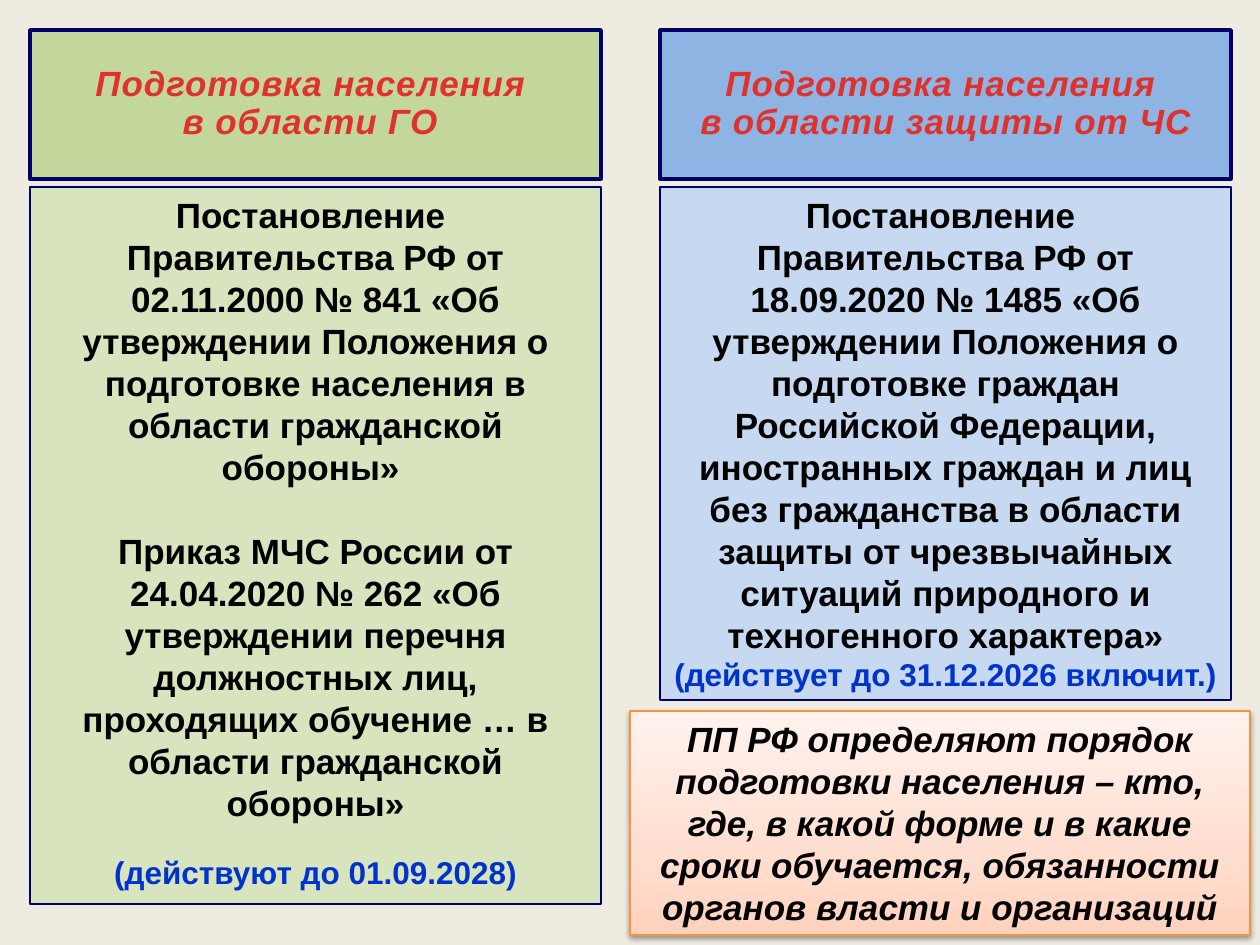
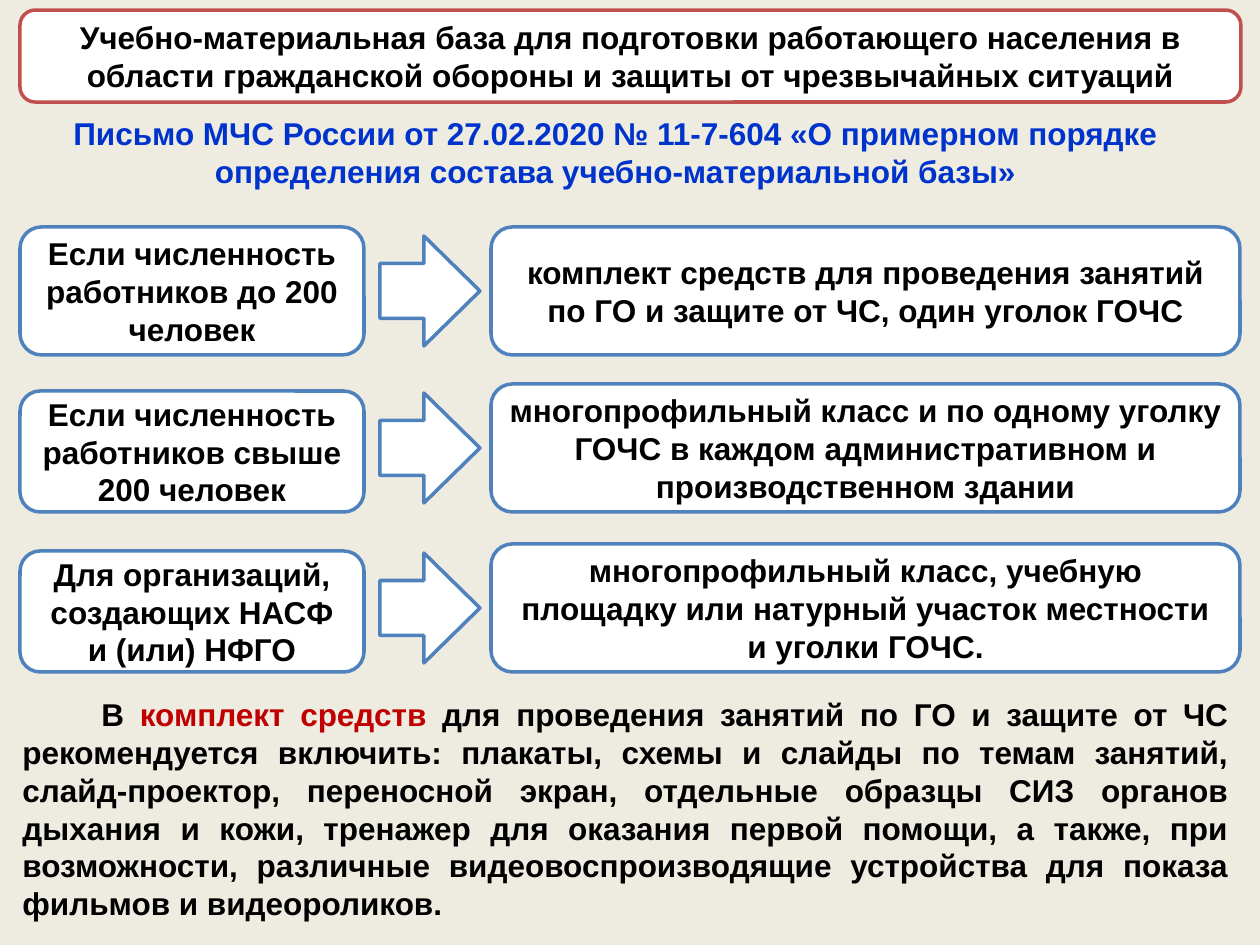
from pptx import Presentation
from pptx.dml.color import RGBColor
from pptx.enum.shapes import MSO_SHAPE as SHAPE
from pptx.enum.text import MSO_ANCHOR as ANCHOR, PP_ALIGN as ALIGN
from pptx.oxml import parse_xml
from pptx.oxml.ns import nsdecls, qn
from pptx.util import Emu, Pt

# Content: a paragraph is (text, format) or ([(text, colour), ...], format)
C = {
    "background": "EEECE1", "black": "000000", "white": "FFFFFF",
    "navy": "000066", "blue": "0033CC", "red": "E0322D", "dark_red": "C00000",
    "green_head": "C3D69B", "green_body": "D7E4BD",
    "blue_head": "8EB4E3", "blue_body": "C6D9F1",
    "orange": "F69240", "title_line": "C0504D", "box_line": "4F81BD",
}
NOTE_GRADIENT = [(0, "FFD2BD"), (35, "FFDED0"), (100, "FFF2ED")]
VALIDITY = dict(size=18, color="blue")

COLUMNS = [
    dict(head=["Подготовка населения ", "в области ГО "],
         head_fill="green_head", body_fill="green_body", height=717,
         body=[("Постановление ", {}),
               ("Правительства РФ от 02.11.2000 № 841 «Об утверждении Положения о "
                "подготовке населения в области гражданской обороны» ", {}),
               ("Приказ МЧС России от 24.04.2020 № 262 «Об утверждении перечня "
                "должностных лиц, проходящих обучение … в области гражданской "
                "обороны»", dict(before=24)),
               ("(действуют до 01.09.2028)", dict(VALIDITY, before=17))]),
    dict(head=["Подготовка населения ", "в области защиты от ЧС"],
         head_fill="blue_head", body_fill="blue_body", height=513,
         body=[("Постановление ", {}),
               ("Правительства РФ от 18.09.2020 № 1485 «Об утверждении Положения о "
                "подготовке граждан Российской Федерации, иностранных граждан и лиц "
                "без гражданства в области защиты от чрезвычайных ситуаций "
                "природного и техногенного характера»", {}),
               ("(действует до 31.12.2026 включит.)", VALIDITY)]),
]
NOTE = ("ПП РФ определяют порядок подготовки населения – кто, где, в какой форме и в "
        "какие сроки обучается, обязанности органов власти и организаций")

TITLE = ("Учебно-материальная база для подготовки работающего населения в области "
         "гражданской обороны и защиты от чрезвычайных ситуаций")
LETTER = ("Письмо МЧС России от 27.02.2020 № 11-7-604 «О примерном порядке определения "
          "состава учебно-материальной базы»")
# top of the row, height of its left box, condition, what is needed
ROWS = [
    (227, 128, "Если численность работников до 200 человек",
     "комплект средств для проведения занятий по ГО и защите от ЧС, один уголок ГОЧС"),
    (384, 121, "Если численность работников свыше 200 человек",
     "многопрофильный класс и по одному уголку ГОЧС в каждом административном и "
     "производственном здании"),
    (544, 121, "Для организаций, создающих НАСФ и (или) НФГО",
     "многопрофильный класс, учебную площадку или натурный участок местности и "
     "уголки ГОЧС."),
]
KIT = [
    ("В ", "black"), ("комплект средств ", "dark_red"),
    ("для проведения занятий по ГО и защите от ЧС рекомендуется включить: плакаты, "
     "схемы и слайды по темам занятий, слайд-проектор, переносной экран, отдельные "
     "образцы СИЗ органов дыхания и кожи, тренажер для оказания первой помощи, а "
     "также, при возможности, различные видеовоспроизводящие устройства для показа "
     "фильмов и видеороликов.", "black"),
]


# Helpers
def px(n):
    return Emu(round(n * 914400 / 126))


def rgb(name):
    return RGBColor.from_string(C[name])


def add_slide():
    slide = prs.slides.add_slide(prs.slide_layouts[6])
    slide.background.fill.solid()
    slide.background.fill.fore_color.rgb = rgb("background")
    return slide


def add_text(p, text, size=18, color="black", italic=False, align=ALIGN.CENTER,
             before=0, line=None, spacing=0, indent=0):
    p.alignment = align
    p.space_before = Pt(before)
    if line:
        p.line_spacing = line
    if indent:
        p._p.get_or_add_pPr().set("indent", str(px(indent)))
    for part, part_color in [(text, color)] if isinstance(text, str) else text:
        r = p.add_run()
        r.text = part
        r.font.name, r.font.size = "Arial", Pt(size)
        r.font.bold, r.font.italic = True, italic
        r.font.color.rgb = rgb(part_color)
        if spacing:
            r._r.get_or_add_rPr().set("spc", str(spacing))


def fill_text(s, paragraphs, anchor=ANCHOR.MIDDLE, **common):
    tf = s.text_frame
    tf.word_wrap = True
    tf.vertical_anchor = anchor
    for i, (text, fmt) in enumerate(paragraphs):
        p = tf.paragraphs[0] if i == 0 else tf.add_paragraph()
        add_text(p, text, **{**common, **fmt})


def add_box(slide, kind, box, fill, line, width=2.0):
    s = slide.shapes.add_shape(kind, *map(px, box))
    s.shadow.inherit = False
    s.fill.solid()
    s.fill.fore_color.rgb = rgb(fill)
    s.line.color.rgb = rgb(line)
    s.line.width = Pt(width)
    return s


def add_label(slide, box, text, **fmt):
    s = slide.shapes.add_textbox(*map(px, box))
    fill_text(s, [(text, fmt)], ANCHOR.TOP)


def style_note(s):
    """Give the note its upward gradient and soft shadow."""
    spPr = s._element.spPr
    stops = "".join(f'<a:gs pos="{pos * 1000}"><a:srgbClr val="{color}"/></a:gs>'
                    for pos, color in NOTE_GRADIENT)
    spPr.replace(spPr.find(qn("a:solidFill")), parse_xml(
        f'<a:gradFill {nsdecls("a")} rotWithShape="1"><a:gsLst>{stops}</a:gsLst>'
        '<a:lin ang="16200000" scaled="1"/></a:gradFill>'))
    spPr.find(qn("a:effectLst")).append(parse_xml(
        f'<a:outerShdw {nsdecls("a")} blurRad="{Pt(3.1)}" dist="{Pt(1.6)}" '
        'dir="5400000" rotWithShape="0"><a:srgbClr val="000000">'
        '<a:alpha val="38000"/></a:srgbClr></a:outerShdw>'))


# Slides
def build_regulations():
    slide = add_slide()
    for i, col in enumerate(COLUMNS):
        left = 30 + 630 * i
        s = add_box(slide, SHAPE.RECTANGLE, (left, 187, 571, col["height"]),
                    col["body_fill"], "navy", 0.75)
        fill_text(s, col["body"], ANCHOR.TOP, size=20)
        s = add_box(slide, SHAPE.RECTANGLE, (left, 30, 571, 149),
                    col["head_fill"], "navy")
        fill_text(s, [(text, {}) for text in col["head"]], size=20, color="red",
                  italic=True, line=0.9, spacing=50)
    s = add_box(slide, SHAPE.RECTANGLE, (630, 711, 620, 224), "white", "orange", 0.75)
    style_note(s)
    fill_text(s, [(NOTE, {})], ANCHOR.TOP, size=20, italic=True)


def build_training_base():
    slide = add_slide()
    s = add_box(slide, SHAPE.ROUNDED_RECTANGLE, (20, 10, 1221, 92),
                "white", "title_line")
    fill_text(s, [(TITLE, {})])
    add_label(slide, (20, 108, 1191, 89), LETTER, color="blue")

    # Both boxes of a row end on the same line
    row_height = 128
    for top, height, condition, needed in ROWS:
        for box, text in (((20, top + row_height - height, 344, height), condition),
                          ((491, top, 749, row_height), needed)):
            s = add_box(slide, SHAPE.ROUNDED_RECTANGLE, box, "white", "box_line")
            fill_text(s, [(text, {})])
        arrow = add_box(slide, SHAPE.RIGHT_ARROW, (380, top + 9, 100, 110),
                        "white", "box_line")
        arrow.adjustments[1] = 0.56

    add_label(slide, (10, 689, 1231, 242), KIT, align=ALIGN.JUSTIFY, indent=79)


prs = Presentation()
prs.slide_width, prs.slide_height = px(1260), px(945)
build_regulations()
build_training_base()
prs.save("out.pptx")
